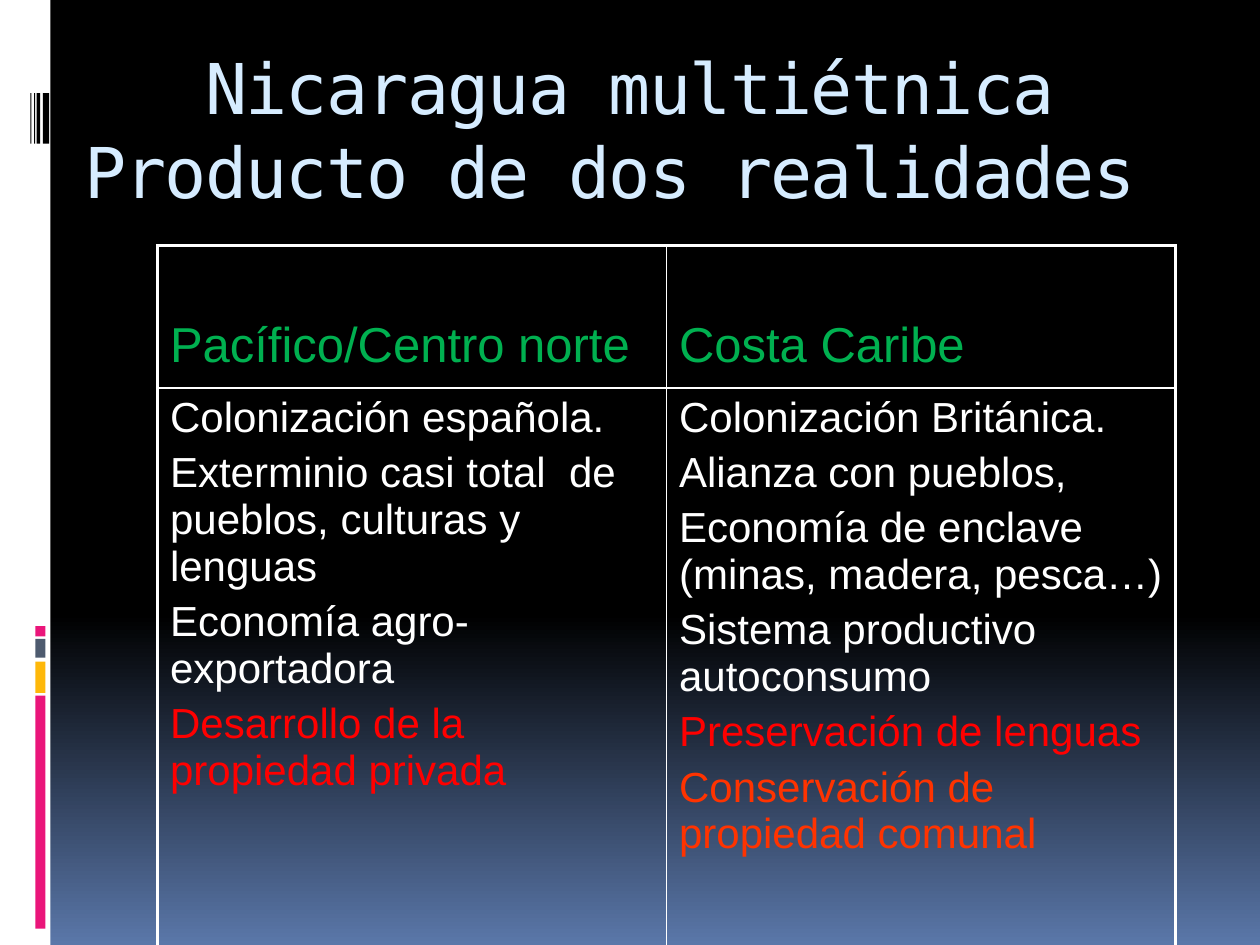
from pptx import Presentation, util as u
from pptx.dml.color import RGBColor
from pptx.enum import shapes, text
from pptx.oxml import parse_xml
from pptx.oxml.ns import nsdecls

WHITE = RGBColor(0xFF, 0xFF, 0xFF)
BLACK = RGBColor(0x00, 0x00, 0x00)
BLUE = RGBColor(0x5A, 0x77, 0xA9)
PALE = RGBColor(0xD6, 0xEC, 0xFF)
PINK = RGBColor(0xEA, 0x15, 0x7A)
GOLD = RGBColor(0xFE, 0xB8, 0x0A)
SLATE = RGBColor(0x4E, 0x5B, 0x6F)
GREEN = RGBColor(0x00, 0xB0, 0x50)
RED = RGBColor(0xFF, 0x00, 0x00)
ORANGE = RGBColor(0xFF, 0x33, 0x00)


class Deck:
    body = "Arial"
    head = "DejaVu Sans Mono"
    thick, thin = 2.25, 1

    def __init__(self):
        self.prs = Presentation()
        self.prs.slide_width = u.Inches(10)
        self.prs.slide_height = u.Inches(7.5)
        self.slide = self.prs.slides.add_slide(self.prs.slide_layouts[5])

    def back(self, top, low, start):
        fill = self.slide.background.fill
        fill.gradient()
        fill.gradient_angle = 270
        for stop, place, color in zip(fill.gradient_stops, (start, 1), (top, low)):
            stop.position = place
            stop.color.rgb = color

    def bar(self, left, top, width, height, color):
        bar = self.slide.shapes.add_shape(
            shapes.MSO_SHAPE.RECTANGLE, *map(u.Inches, (left, top, width, height)))
        bar.shadow.inherit = False
        bar.fill.solid()
        bar.fill.fore_color.rgb = color
        bar.line.fill.background()

    def font(self, para, name, size, color):
        para.font.name = name
        para.font.size = u.Pt(size)
        para.font.color.rgb = color

    def title(self, words, left, top, width, height):
        box = self.slide.shapes.title
        box.left, box.top, box.width, box.height = map(
            u.Inches, (left, top, width, height))
        frame = box.text_frame
        frame.text = words
        frame.auto_size = text.MSO_AUTO_SIZE.NONE
        frame.vertical_anchor = text.MSO_ANCHOR.TOP
        frame.margin_left = frame.margin_right = 0
        frame.margin_top = frame.margin_bottom = 0
        para = frame.paragraphs[0]
        para.alignment = text.PP_ALIGN.CENTER
        para.line_spacing = u.Pt(48)
        self.font(para, self.head, 40, PALE)
        for run in para.runs:
            run.font._element.set("spc", "-100")

    def edge(self, cell, side, width):
        line = parse_xml(
            f'<a:{side} {nsdecls("a")} w="{u.Pt(width)}"><a:solidFill>'
            f'<a:srgbClr val="{WHITE}"/></a:solidFill></a:{side}>')
        cell._tc.get_or_add_tcPr().append(line)

    def cell(self, cell, lines, size):
        cell.margin_left = cell.margin_right = u.Inches(0.1)
        cell.margin_top = cell.margin_bottom = u.Inches(0.05)
        frame = cell.text_frame
        for i, (words, color) in enumerate(lines):
            para = frame.add_paragraph() if i else frame.paragraphs[0]
            para.text = words
            if i:
                para.space_before = u.Pt(size * 0.2)
            self.font(para, self.body, size, color)

    def table(self, rows, sizes, left, top, width, highs):
        count = len(rows[0])
        grid = self.slide.shapes.add_table(
            len(rows), count,
            *map(u.Inches, (left, top, width, sum(highs)))).table
        grid.first_row = grid.horz_banding = False
        for r, row in enumerate(rows):
            grid.rows[r].height = u.Inches(highs[r])
            for c, lines in enumerate(row):
                cell = grid.cell(r, c)
                self.cell(cell, lines, sizes[r])
                # Outer edges are thick, inner ones thin
                outer = {"lnL": c == 0, "lnR": c == count - 1,
                         "lnT": r == 0, "lnB": r == len(rows) - 1}
                for side, rim in outer.items():
                    self.edge(cell, side, self.thick if rim else self.thin)
                cell.fill.background()
        # Headings sit low in the first row
        for cell in grid.rows[0].cells:
            cell.vertical_anchor = text.MSO_ANCHOR.BOTTOM
            cell.margin_bottom = u.Inches(0.12)


def main():
    deck = Deck()
    deck.back(BLACK, BLUE, 0.65)

    # Side strip with coloured blocks
    deck.bar(0, 0, 0.4, 7.5, WHITE)
    for top, high, color in ((5.52, 1.85, PINK), (5.25, 0.25, GOLD),
                             (5.07, 0.15, SLATE), (4.97, 0.08, PINK)):
        deck.bar(0.28, top, 0.08, high, color)

    # Black stripes
    for left, wide in ((0.34, 0.05), (0.29, 0.03), (0.27, 0.01), (0.24, 0.01)):
        deck.bar(left, 0.74, wide, 0.4, BLACK)

    deck.title("Nicaragua multiétnica\vProducto de dos realidades ",
               0.5, 0.35, 9, 1.35)

    # Comparison of the two regions
    west = [("Colonización española.", WHITE),
            ("Exterminio casi total  de pueblos, culturas y lenguas", WHITE),
            ("Economía agro-exportadora", WHITE),
            ("Desarrollo de la propiedad privada", RED)]
    east = [("Colonización Británica.", WHITE),
            ("Alianza con pueblos,", WHITE),
            ("Economía de enclave (minas, madera, pesca…)", WHITE),
            ("Sistema productivo autoconsumo", WHITE),
            ("Preservación de lenguas", RED),
            ("Conservación de propiedad comunal", ORANGE)]
    heads = [[("Pacífico/Centro norte", GREEN)], [("Costa Caribe", GREEN)]]
    deck.table([heads, [west, east]], (28, 24), 1.25, 1.95, 8.08, (1.13, 4.58))

    deck.prs.save("out.pptx")


if __name__ == "__main__":
    main()
